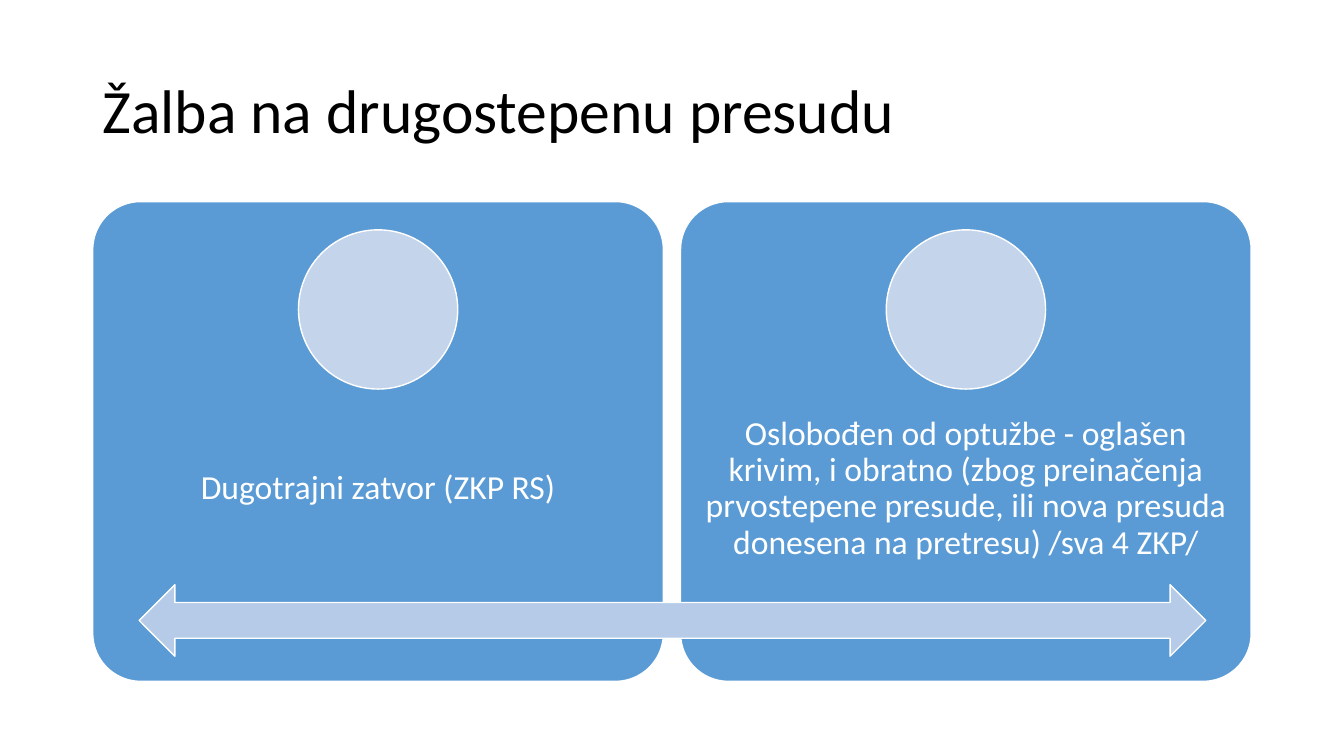
from dataclasses import dataclass

import pptx
import pptx.dml.color
import pptx.enum.shapes
import pptx.enum.text
import pptx.util

Inches = pptx.util.Inches
Pt = pptx.util.Pt
MSO_SHAPE = pptx.enum.shapes.MSO_SHAPE
PP_ALIGN = pptx.enum.text.PP_ALIGN

COLORS = {
    "title": "000000",
    "white": "FFFFFF",
    "card": "5B9BD5",
    "circle": "C4D5EB",
    "arrow": "B5CBE7",
}
FONT = "Calibri"
CARD_LEFT, CARD_TOP = 0.92, 2.0
CARD_WIDTH, CARD_HEIGHT = 5.66, 4.76
CARD_STEP = 5.83
CIRCLE_SIZE = 1.58


@dataclass
class Box:
    left: float
    top: float
    width: float
    height: float

    def lengths(self) -> list[pptx.util.Length]:
        return [Inches(v) for v in (self.left, self.top, self.width, self.height)]


@dataclass
class Card:
    text: str


CARDS = [
    Card("Dugotrajni zatvor (ZKP RS)"),
    Card(
        "Oslobođen od optužbe - oglašen krivim, i obratno (zbog preinačenja "
        "prvostepene presude, ili nova presuda donesena na pretresu) /sva 4 ZKP/"
    ),
]


def rgb(name: str) -> pptx.dml.color.RGBColor:
    return pptx.dml.color.RGBColor.from_string(COLORS[name])


def add_shape(slide: pptx.slide.Slide, kind: MSO_SHAPE, box: Box, fill: str) -> pptx.shapes.autoshape.Shape:
    sp = slide.shapes.add_shape(kind, *box.lengths())
    sp.shadow.inherit = False
    sp.fill.solid()
    sp.fill.fore_color.rgb = rgb(fill)
    sp.line.color.rgb = rgb("white")
    sp.line.width = Pt(1)
    return sp


def add_text(slide: pptx.slide.Slide, text: str, box: Box, size: int, color: str,
             align: PP_ALIGN, inset: float) -> None:
    tf = slide.shapes.add_textbox(*box.lengths()).text_frame
    tf.word_wrap = True
    tf.vertical_anchor = pptx.enum.text.MSO_ANCHOR.MIDDLE
    tf.margin_left = tf.margin_right = Inches(inset)
    tf.margin_top = tf.margin_bottom = Inches(inset)
    tf.text = text
    p = tf.paragraphs[0]
    p.alignment = align
    p.line_spacing = 0.9
    r = p.runs[0]
    r.font.name = FONT
    r.font.size = Pt(size)
    r.font.color.rgb = rgb(color)


def add_card(slide: pptx.slide.Slide, card: Card, left: float) -> None:
    panel = Box(left, CARD_TOP, CARD_WIDTH, CARD_HEIGHT)
    sp = add_shape(slide, MSO_SHAPE.ROUNDED_RECTANGLE, panel, "card")
    sp.adjustments[0] = 0.1
    add_text(slide, card.text, Box(left, 3.9, CARD_WIDTH, 1.9), 24, "white", PP_ALIGN.CENTER, 0.19)
    circle_left = left + (CARD_WIDTH - CIRCLE_SIZE) / 2
    add_shape(slide, MSO_SHAPE.OVAL, Box(circle_left, 2.28, CIRCLE_SIZE, CIRCLE_SIZE), "circle")


def main() -> None:
    prs = pptx.Presentation()
    prs.slide_width = Inches(13.33)
    prs.slide_height = Inches(7.5)
    slide = prs.slides.add_slide(prs.slide_layouts[6])
    add_text(slide, "Žalba na drugostepenu presudu", Box(0.92, 0.4, 11.5, 1.45),
             44, "title", PP_ALIGN.LEFT, 0.1)
    for i, card in enumerate(CARDS):
        add_card(slide, card, CARD_LEFT + i * CARD_STEP)
    add_shape(slide, MSO_SHAPE.LEFT_RIGHT_ARROW, Box(1.38, 5.8, 10.58, 0.71), "arrow")
    prs.save("out.pptx")


if __name__ == "__main__":
    main()
